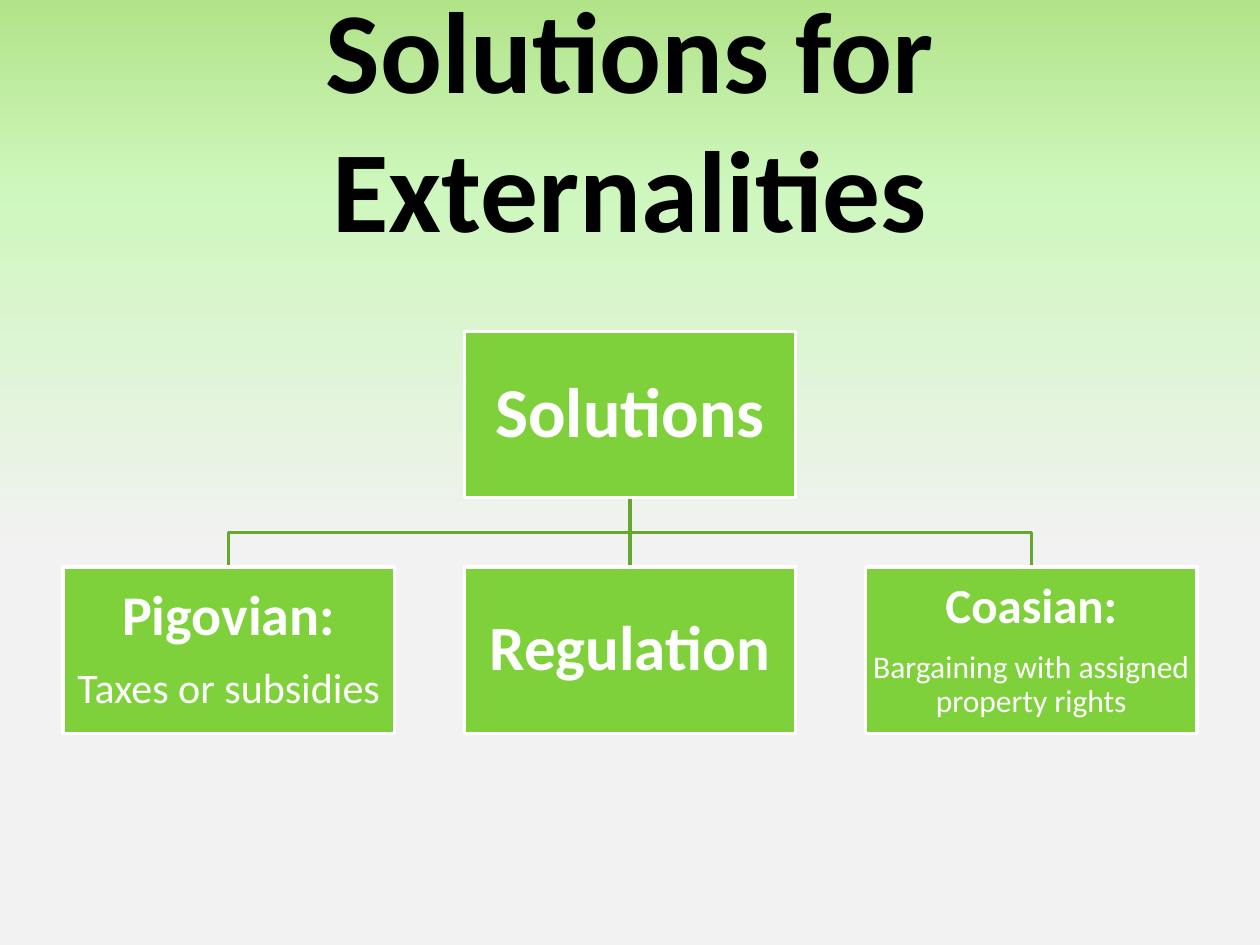
from copy import deepcopy
from dataclasses import dataclass

from pptx import Presentation
from pptx.dml.color import RGBColor
from pptx.enum.shapes import MSO_CONNECTOR as Link, MSO_SHAPE as Preset
from pptx.enum.text import MSO_ANCHOR as Anchor, MSO_AUTO_SIZE as AutoSize, PP_ALIGN as Align
from pptx.oxml.ns import qn
from pptx.util import Inches, Pt


@dataclass(frozen=True)
class Theme:
    """Colours, type sizes and grid lengths of the slide."""
    font: str = "Calibri"
    ink: str = "000000"
    paper: str = "FFFFFF"
    node: str = "7FD13B"
    branch: str = "66A72F"
    backdrop: tuple = ((0, "B2E389"), (0.2, "CEF7BD"), (0.59, "F2F2F2"))
    title_size: int = 66
    root_size: int = 40
    rule: int = 2
    width: float = 10
    height: float = 7.5
    margin: float = 0.5
    columns: int = 3
    node_width: float = 2.63
    node_height: float = 1.32
    top: float = 2.63
    row_gap: float = 0.55


THEME = Theme()
SOLUTIONS = (
    (("Pigovian:", 32), ("Taxes or subsidies", 24)),
    (("Regulation", 36),),
    (("Coasian:", 28), ("Bargaining with assigned property rights", 18)),
)


def rgb(value):
    """Turn a hex string into a colour."""
    return RGBColor.from_string(value)


def column_left(column):
    """Return the left edge of a node column."""
    free = THEME.width - 2 * THEME.margin - THEME.node_width
    return THEME.margin + column * free / (THEME.columns - 1)


def row_top(row):
    """Return the top edge of a node row."""
    return THEME.top + row * (THEME.node_height + THEME.row_gap)


def write(paragraph, text, *, size, color, bold=False, spacing=None, after=0):
    """Fill a paragraph with formatted, centred text."""
    paragraph.text = text
    paragraph.alignment = Align.CENTER
    paragraph.line_spacing = spacing
    paragraph.space_after = Pt(after)
    font = paragraph.font
    font.name, font.size, font.bold = THEME.font, Pt(size), bold
    font.color.rgb = rgb(color)


def paint_background(slide):
    """Paint the vertical gradient behind the slide."""
    fill = slide.background.fill
    fill.gradient()
    fill.gradient_angle = 270
    stop_list = slide.element.find(".//" + qn("a:gsLst"))
    stop_list.append(deepcopy(stop_list[0]))
    for stop, (position, color) in zip(fill.gradient_stops, THEME.backdrop):
        stop.position = position
        stop.color.rgb = rgb(color)


def set_title(slide, text):
    """Place and format the title placeholder."""
    title = slide.shapes.title
    title.left, title.top = Inches(THEME.margin), Inches(0.3)
    title.width, title.height = Inches(THEME.width - 2 * THEME.margin), Inches(1.25)
    frame = title.text_frame
    frame.auto_size, frame.word_wrap = AutoSize.NONE, True
    frame.vertical_anchor = Anchor.MIDDLE
    write(frame.paragraphs[0], text, size=THEME.title_size, color=THEME.ink, bold=True)


def add_branch(slide, column, parent_column=1):
    """Join the root to the child in a column."""
    start, end = (column_left(c) + THEME.node_width / 2 for c in (parent_column, column))
    top, bottom = row_top(1) - THEME.row_gap, row_top(1)
    middle = (top + bottom) / 2
    if column == parent_column:
        branch = slide.shapes.add_connector(
            Link.STRAIGHT, Inches(start), Inches(top), Inches(end), Inches(bottom))
        branch._element.spPr.get_or_add_ln()
        branch._element.spPr.append(branch._element.spPr.makeelement(qn("a:effectLst")))
    else:
        outline = slide.shapes.build_freeform(Inches(start), Inches(top), scale=1.0)
        corners = ((start, middle), (end, middle), (end, bottom))
        outline.add_line_segments([(Inches(x), Inches(y)) for x, y in corners], close=False)
        branch = outline.convert_to_shape()
        branch.fill.background()
        branch.shadow.inherit = False
    branch.line.color.rgb = rgb(THEME.branch)
    branch.line.width = Pt(THEME.rule)


def add_node(slide, column, row, entries):
    """Add a box with a bold heading and optional detail."""
    node = slide.shapes.add_shape(
        Preset.RECTANGLE, Inches(column_left(column)), Inches(row_top(row)),
        Inches(THEME.node_width), Inches(THEME.node_height))
    node.shadow.inherit = False
    node.fill.solid()
    node.fill.fore_color.rgb = rgb(THEME.node)
    node.line.color.rgb = rgb(THEME.paper)
    node.line.width = Pt(THEME.rule)
    frame = node.text_frame
    frame.word_wrap, frame.vertical_anchor = True, Anchor.MIDDLE
    inset = Inches(0.02)
    frame.margin_left = frame.margin_right = frame.margin_top = frame.margin_bottom = inset
    for index, (text, size) in enumerate(entries):
        paragraph = frame.add_paragraph() if index else frame.paragraphs[0]
        after = 0.35 * size if index < len(entries) - 1 else 0
        write(paragraph, text, size=size, color=THEME.paper, bold=index == 0,
              spacing=0.9, after=after)


def main():
    """Build the slide and save it."""
    deck = Presentation()
    deck.slide_width, deck.slide_height = Inches(THEME.width), Inches(THEME.height)
    slide = deck.slides.add_slide(deck.slide_layouts[5])
    paint_background(slide)
    set_title(slide, "Solutions for Externalities")
    for column in reversed(range(THEME.columns)):
        add_branch(slide, column)
    add_node(slide, 1, 0, (("Solutions", THEME.root_size),))
    for column, entries in enumerate(SOLUTIONS):
        add_node(slide, column, 1, entries)
    deck.save("out.pptx")


if __name__ == "__main__":
    main()
